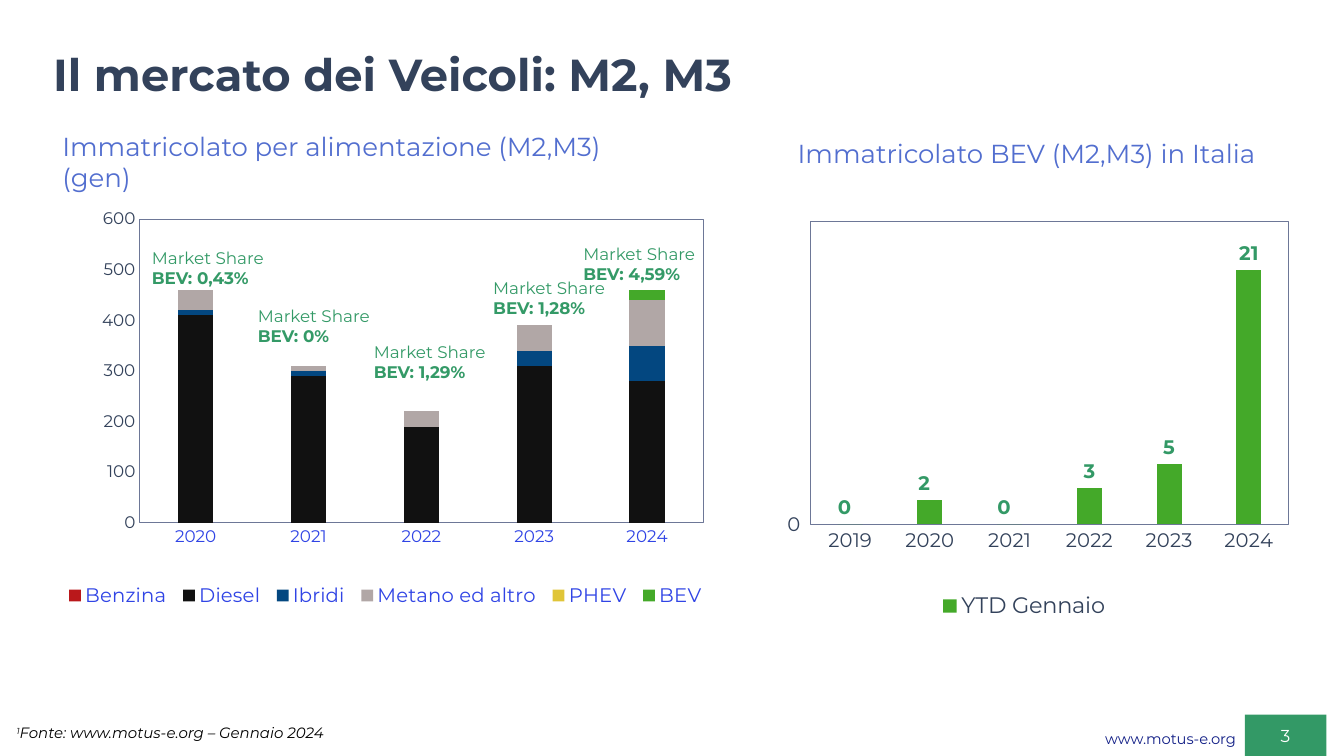
from lxml import etree
from pptx import Presentation
from pptx.chart.data import CategoryChartData
from pptx.dml.color import RGBColor
from pptx.enum.chart import XL_CHART_TYPE, XL_LABEL_POSITION, XL_LEGEND_POSITION, XL_TICK_MARK
from pptx.enum.shapes import MSO_SHAPE
from pptx.enum.text import MSO_ANCHOR, PP_ALIGN
from pptx.oxml import parse_xml
from pptx.oxml.ns import nsdecls, qn
from pptx.util import Cm, Pt

STACKED, CLUSTERED = XL_CHART_TYPE.COLUMN_STACKED, XL_CHART_TYPE.COLUMN_CLUSTERED
OUTSIDE_END, BOTTOM = XL_LABEL_POSITION.OUTSIDE_END, XL_LEGEND_POSITION.BOTTOM
NO_TICK, TICK_OUT = XL_TICK_MARK.NONE, XL_TICK_MARK.OUTSIDE
RECTANGLE = MSO_SHAPE.RECTANGLE
TOP, MIDDLE = MSO_ANCHOR.TOP, MSO_ANCHOR.MIDDLE
LEFT, CENTER, RIGHT = PP_ALIGN.LEFT, PP_ALIGN.CENTER, PP_ALIGN.RIGHT

THEME = {
    "font": "Montserrat",
    "title": "33425B", "heading": "526ECF", "axis": "33425B", "blue": "3044E5",
    "navy": "111E86", "share": "349A67", "green": "339966", "white": "FFFFFF",
    "black": "000000", "frame": "6D7797", "bev": "44A929",
    "title_size": 32, "heading_size": 18.6, "share_size": 12, "note_size": 10.7,
    "site_size": 10.5, "page_size": 12.3,
}

TITLE = "Il mercato dei Veicoli: M2, M3"
FUEL_HEADING = "Immatricolato per alimentazione (M2,M3) (gen)"
BEV_HEADING = "Immatricolato BEV (M2,M3) in Italia"
SOURCE_NOTE = "Fonte: www.motus-e.org – Gennaio 2024"
SITE = "www.motus-e.org"
PAGE = "3"

FUEL_YEARS = ["2020", "2021", "2022", "2023", "2024"]
FUEL_SERIES = [
    ("Benzina", [0, 0, 0, 0, None], "BA181B"),
    ("Diesel", [410, 290, 190, 310, 280], "111111"),
    ("Ibridi", [10, 10, 0, 30, 70], "034780"),
    ("Metano ed altro", [40, 10, 30, 50, 90], "B1A7A6"),
    ("PHEV", [0, 0, 0, 0, None], "E0C538"),
    ("BEV", [0, 0, 0, 0, 20], THEME["bev"]),
]
BEV_YEARS = ["2019", "2020", "2021", "2022", "2023", "2024"]
BEV_SERIES = [("YTD Gennaio", [0, 2, 0, 3, 5, 21], THEME["bev"])]
SHIFTED_LABELS = 3  # the first labels sit a little left of their columns

# share, left and top in centimetres
MARKET_SHARES = [
    ("0,43%", 3.58, 6.12),
    ("0%", 6.25, 7.57),
    ("1,29%", 9.17, 8.48),
    ("1,28%", 12.18, 6.86),
    ("4,59%", 14.45, 6.01),
]


def rgb(name):
    return RGBColor.from_string(THEME.get(name, name))


def style_font(font, size, color, bold=False, italic=False):
    font.name, font.size, font.color.rgb = THEME["font"], Pt(size), rgb(color)
    font.bold, font.italic = bold, italic


def write_text(shape, text, *, size, color, bold_lines=(), italic=False, align=LEFT,
               anchor=TOP, insets=(0.25, 0.13), line_spacing=None, superscript=""):
    """Fill a shape with one paragraph per line, after an optional raised mark."""
    frame = shape.text_frame
    frame.word_wrap, frame.vertical_anchor = True, anchor
    frame.margin_left = frame.margin_right = Cm(insets[0])
    frame.margin_top = frame.margin_bottom = Cm(insets[1])
    for index, line in enumerate(text.split("\n")):
        paragraph = frame.add_paragraph() if index else frame.paragraphs[0]
        paragraph.alignment = align
        if line_spacing:
            paragraph.line_spacing = line_spacing
        for content, raised in ((superscript, True), (line, False)):
            if content:
                run = paragraph.add_run()
                run.text = content
                style_font(run.font, size, color, index in bold_lines, italic)
                if raised:
                    run.font._element.set("baseline", "30000")


def add_text(slide, text, box, **style):
    write_text(slide.shapes.add_textbox(*map(Cm, box)), text, **style)


def set_layout(parent, position, settings):
    """Give a chart part a manual layout from (name, value) pairs."""
    for old in parent.findall(qn("c:layout")):
        parent.remove(old)
    layout = parse_xml(f"<c:layout {nsdecls('c')}><c:manualLayout/></c:layout>")
    for name, value in settings:
        etree.SubElement(layout[0], qn(f"c:{name}")).set("val", str(value))
    parent.insert(position, layout)


def edge_box(fractions):
    return [("xMode", "edge"), ("yMode", "edge"), *zip("xywh", fractions)]


def frame_plot(plot_area):
    plot_area.append(parse_xml(
        f"<c:spPr {nsdecls('c', 'a')}><a:noFill/><a:ln w='9525'><a:solidFill>"
        f"<a:srgbClr val='{THEME['frame']}'/></a:solidFill></a:ln></c:spPr>"))


def add_column_chart(slide, kind, box, years, series_rows, *, plot_box, legend_box,
                     size, legend_size, category_color, legend_color, maximum, major, tick):
    data = CategoryChartData(number_format="#,##0")
    data.categories = years
    for name, values, _ in series_rows:
        data.add_series(name, values)
    chart = slide.shapes.add_chart(kind, *map(Cm, box), data).chart
    style_font(chart.font, size, "axis")
    chart.has_title = False
    chart.has_legend = True
    chart.legend.position, chart.legend.include_in_layout = BOTTOM, False
    style_font(chart.legend.font, legend_size, legend_color)

    plot = chart.plots[0]
    plot.gap_width, plot.vary_by_categories = 219, False
    plot.overlap = 100 if kind == STACKED else 0
    for series, (_, _, color) in zip(plot.series, series_rows):
        series.format.fill.solid()
        series.format.fill.fore_color.rgb = rgb(color)

    for axis, color, mark in ((chart.category_axis, category_color, NO_TICK),
                              (chart.value_axis, "axis", tick)):
        axis.has_major_gridlines = False
        axis.major_tick_mark, axis.minor_tick_mark = mark, NO_TICK
        axis.format.line.fill.background()
        style_font(axis.tick_labels.font, size, color)
    values = chart.value_axis
    values.minimum_scale, values.maximum_scale, values.major_unit = 0, maximum, major
    values.tick_labels.number_format = "#,##0"
    values.tick_labels.number_format_is_linked = False

    plot_area = chart._chartSpace.chart.plotArea
    set_layout(plot_area, 0, [("layoutTarget", "inner"), *edge_box(plot_box)])
    frame_plot(plot_area)
    set_layout(chart.legend._element, 1, edge_box(legend_box))
    return chart


def label_columns(series):
    labels = series.data_labels
    labels.show_value, labels.position = True, OUTSIDE_END
    style_font(labels.font, 14, "green", bold=True)
    for index in range(SHIFTED_LABELS):
        label = series.points[index].data_label
        style_font(label.font, 14, "green", bold=True)
        label.position = OUTSIDE_END
    for element in series._element.iter(qn("c:dLbl")):
        set_layout(element, 1, [("x", -0.01), ("y", 0)])


def main():
    presentation = Presentation()
    presentation.slide_width, presentation.slide_height = Cm(33.87), Cm(19.05)
    slide = presentation.slides.add_slide(presentation.slide_layouts[6])

    add_text(slide, SITE, (17.54, 18.16, 13.84, 0.91), size=THEME["site_size"],
             color="navy", align=RIGHT, anchor=MIDDLE, insets=(0.23, 0.1))
    page_box = slide.shapes.add_shape(RECTANGLE, Cm(31.37), Cm(18.01), Cm(2.06), Cm(1.04))
    page_box.shadow.inherit = False
    page_box.fill.solid()
    page_box.fill.fore_color.rgb = rgb("green")
    page_box.line.fill.background()
    write_text(page_box, PAGE, size=THEME["page_size"], color="white",
               align=CENTER, anchor=MIDDLE)

    add_text(slide, TITLE, (1.09, 1.09, 31.7, 1.75), size=THEME["title_size"],
             color="title", bold_lines=(0,), insets=(0.25, 0.25), line_spacing=0.9)
    heading = {"size": THEME["heading_size"], "color": "heading"}
    add_text(slide, FUEL_HEADING, (1.32, 3.15, 14.81, 1.98), **heading)
    add_text(slide, BEV_HEADING, (18.82, 3.15, 14.1, 1.4), align=CENTER, anchor=MIDDLE,
             **heading)
    add_text(slide, SOURCE_NOTE, (0.42, 18.24, 12.65, 0.46), size=THEME["note_size"],
             color="black", italic=True, insets=(0, 0), superscript="1")

    add_column_chart(slide, STACKED, (0.62, 5.27, 17.32, 11.13), FUEL_YEARS, FUEL_SERIES,
                     plot_box=(0.167, 0.022, 0.821, 0.688),
                     legend_box=(0.05, 0.835, 0.95, 0.08),
                     size=12, legend_size=14, category_color="blue", legend_color="blue",
                     maximum=600, major=100, tick=NO_TICK)
    for share, left, top in MARKET_SHARES:
        add_text(slide, f"Market Share\nBEV: {share}", (left, top, 3.53, 1.4),
                 size=THEME["share_size"], color="share", bold_lines=(1,))

    bev_chart = add_column_chart(slide, CLUSTERED, (18.83, 5.09, 14.1, 11.84),
                                 BEV_YEARS, BEV_SERIES,
                                 plot_box=(0.113, 0.041, 0.855, 0.645),
                                 legend_box=(0.325, 0.82, 0.34, 0.08),
                                 size=14, legend_size=16, category_color="axis",
                                 legend_color="axis", maximum=25, major=50, tick=TICK_OUT)
    label_columns(bev_chart.plots[0].series[0])

    presentation.save("out.pptx")


if __name__ == "__main__":
    main()
